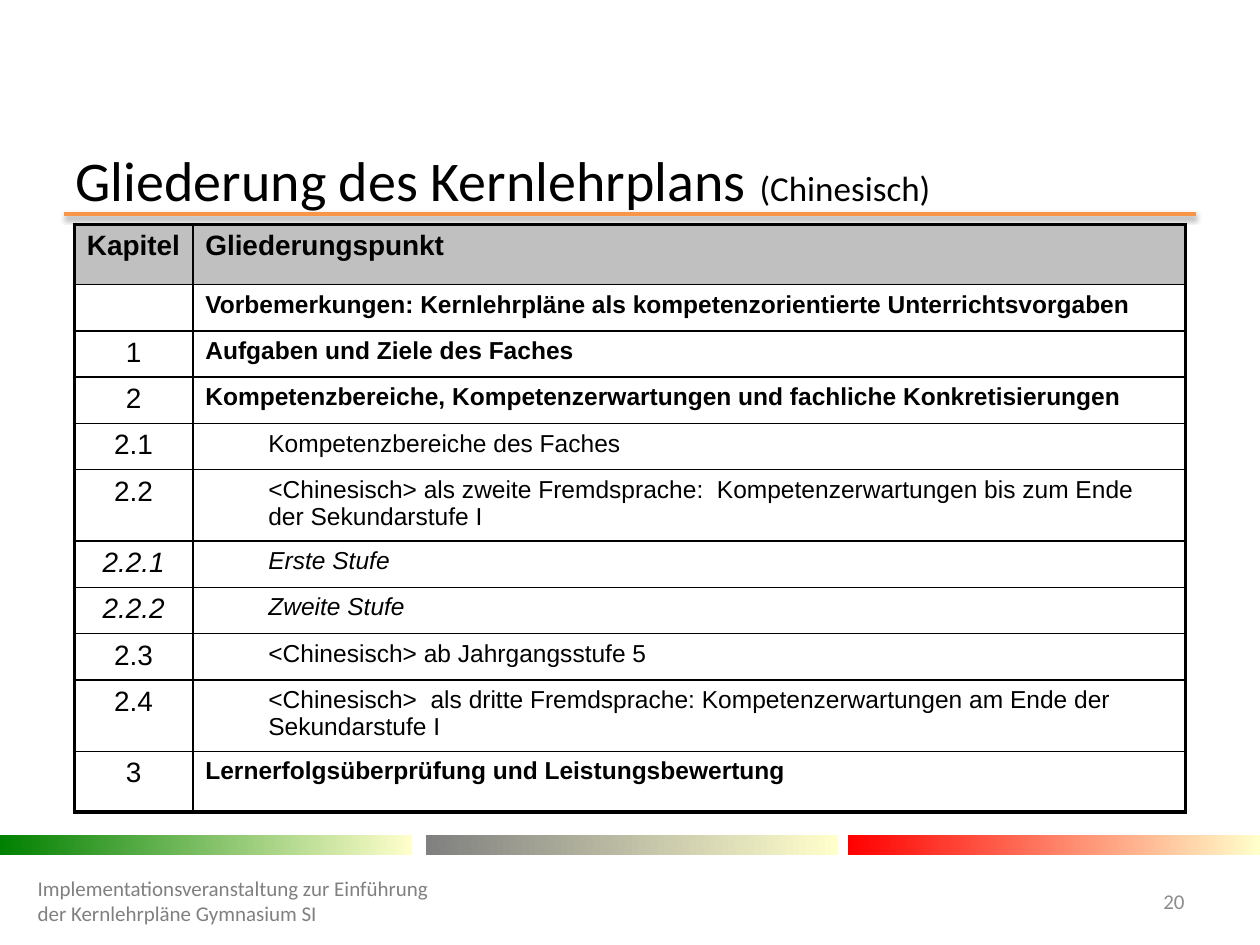
"""Build the slide with the outline of the core curriculum."""
from lxml.etree import SubElement
from pptx import Presentation
from pptx.dml.color import RGBColor
from pptx.enum.shapes import MSO_CONNECTOR as Link, MSO_SHAPE as Shape
from pptx.enum.text import MSO_ANCHOR as Anchor, PP_ALIGN as Align
from pptx.oxml.ns import qn
from pptx.util import Inches, Pt

ROWS = [
    ("Kapitel", "Gliederungspunkt", "head", 0.48),
    ("", "Vorbemerkungen: Kernlehrpläne als kompetenzorientierte Unterrichtsvorgaben", "main", 0.35),
    ("1", "Aufgaben und Ziele des Faches", "main", 0.35),
    ("2", "Kompetenzbereiche, Kompetenzerwartungen und fachliche Konkretisierungen", "main", 0.35),
    ("2.1", "Kompetenzbereiche des Faches", "sub", 0.35),
    ("2.2", "<Chinesisch> als zweite Fremdsprache:  Kompetenzerwartungen bis zum Ende "
            "der Sekundarstufe I", "sub", 0.54),
    ("2.2.1", "Erste Stufe", "step", 0.35),
    ("2.2.2", "Zweite Stufe", "step", 0.35),
    ("2.3", "<Chinesisch> ab Jahrgangsstufe 5", "sub", 0.35),
    ("2.4", "<Chinesisch>  als dritte Fremdsprache: Kompetenzerwartungen am Ende der "
            "Sekundarstufe I", "sub", 0.54),
    ("3", "Lernerfolgsüberprüfung und Leistungsbewertung", "main", 0.48),
]
BARS = [(0, "008000"), (3.38, "808080"), (6.73, "FF0000")]


def rgb(code):
    """Turn a hex string into a colour."""
    return RGBColor.from_string(code)


class Deck:
    """Hold the style and the current slide."""

    sans, grid = "Calibri", "Arial"
    ink, line, pale, shade = "000000", "F79646", "FFFFCC", "C0C0C0"

    def __init__(self):
        """Open a deck with one title-only slide."""
        self.prs = Presentation()
        self.prs.slide_width, self.prs.slide_height = Inches(10), Inches(7.5)
        self.slide = self.prs.slides.add_slide(self.prs.slide_layouts[5])
        self.shapes = self.slide.shapes

    def style(self, run, size, face, color, bold=False, slant=False):
        """Format one run."""
        font = run.font
        font.size, font.name, font.bold, font.italic = Pt(size), face, bold, slant
        font.color.rgb = rgb(color)

    def rule(self, left, right, y):
        """Draw the shadowed line below the title."""
        rule = self.shapes.add_connector(Link.STRAIGHT, Inches(left), Inches(y), Inches(right), Inches(y))
        rule.line.color.rgb, rule.line.width = rgb(self.line), Pt(2)
        effect = SubElement(rule._element.spPr, qn("a:effectLst"))
        shadow = SubElement(effect, qn("a:outerShdw"), blurRad=str(Pt(3.1)), dist=str(Pt(1.6)),
                            dir="5400000", rotWithShape="0")
        tone = SubElement(shadow, qn("a:srgbClr"), val=self.ink)
        SubElement(tone, qn("a:alpha"), val="38000")

    def bar(self, left, color):
        """Draw a bar that fades to the pale tone."""
        bar = self.shapes.add_shape(Shape.RECTANGLE, Inches(left), Inches(6.63), Inches(3.27), Inches(0.16))
        bar.shadow.inherit = False
        bar.line.fill.background()
        bar.fill.gradient()
        bar.fill.gradient_angle = 0
        for stop, tone, place in zip(bar.fill.gradient_stops, (color, self.pale), (0, 1)):
            stop.color.rgb, stop.position = rgb(tone), place

    def title(self, parts):
        """Place the title with its sized parts."""
        box = self.shapes.title
        box.left, box.top, box.width, box.height = Inches(0.5), Inches(1.23), Inches(9), Inches(0.39)
        box.text_frame.vertical_anchor = Anchor.MIDDLE
        para = box.text_frame.paragraphs[0]
        para.alignment = Align.LEFT
        for text, size in parts:
            run = para.add_run()
            run.text = text
            self.style(run, size, self.sans, self.ink)

    def note(self, text, left, width, color, align):
        """Add a small text at the foot."""
        box = self.shapes.add_textbox(Inches(left), Inches(6.95), Inches(width), Inches(0.4))
        frame = box.text_frame
        frame.word_wrap, frame.vertical_anchor = True, Anchor.MIDDLE
        frame.text = text
        frame.paragraphs[0].alignment = align
        self.style(frame.paragraphs[0].runs[0], 12, self.sans, color)

    def edge(self, cell, sides):
        """Give a cell its four borders."""
        for side, width in sides.items():
            ln = SubElement(cell._tc.get_or_add_tcPr(), qn("a:ln" + side), w=str(Pt(width)))
            SubElement(SubElement(ln, qn("a:solidFill")), qn("a:srgbClr"), val=self.ink)

    def cell(self, cell, text, kind, first):
        """Fill and format one table cell."""
        cell.text = text
        para = cell.text_frame.paragraphs[0]
        head = kind == "head"
        size = 16 if first or head else 14
        para.alignment = Align.CENTER if first and not head else Align.LEFT
        if not first and kind in ("sub", "step"):
            props = para._p.get_or_add_pPr()
            props.set("marL", str(Inches(0.5)))
            props.set("lvl", "1")
        for run in para.runs:
            self.style(run, size, self.grid, self.ink, head or kind == "main" and not first, kind == "step")
        if not text:
            SubElement(para._p, qn("a:endParaRPr"), sz=str(size * 100))
        if head:
            cell.fill.solid()
            cell.fill.fore_color.rgb = rgb(self.shade)
        else:
            cell.fill.background()

    def table(self, rows, left, top, cols):
        """Add the outline table with a heavy frame."""
        high = sum(row[-1] for row in rows)
        table = self.shapes.add_table(len(rows), len(cols), Inches(left), Inches(top),
                                      Inches(sum(cols)), Inches(high)).table
        table.first_row = table.horz_banding = False
        for col, width in zip(table.columns, cols):
            col.width = Inches(width)
        last = len(rows) - 1
        for r, (*texts, kind, tall) in enumerate(rows):
            table.rows[r].height = Inches(tall)
            for c, text in enumerate(texts):
                cell = table.cell(r, c)
                heavy = {"L": c == 0, "R": c == 1, "T": r == 0, "B": r == last}
                self.edge(cell, {side: 2.25 if on else 1 for side, on in heavy.items()})
                self.cell(cell, text, kind, c == 0)


def main():
    """Build and save the slide."""
    deck = Deck()
    deck.rule(0.51, 9.49, 1.7)
    for left, color in BARS:
        deck.bar(left, color)
    deck.title([("Gliederung des Kernlehrplans ", 32), ("(Chinesisch)", 20)])
    deck.note("Implementationsveranstaltung zur Einführung der Kernlehrpläne Gymnasium SI",
              0.2, 3.31, "808080", Align.LEFT)
    deck.note("20", 8.86, 0.64, "8C8C8C", Align.RIGHT)
    deck.table(ROWS, 0.59, 1.78, (0.94, 7.88))
    deck.prs.save("out.pptx")


if __name__ == "__main__":
    main()
